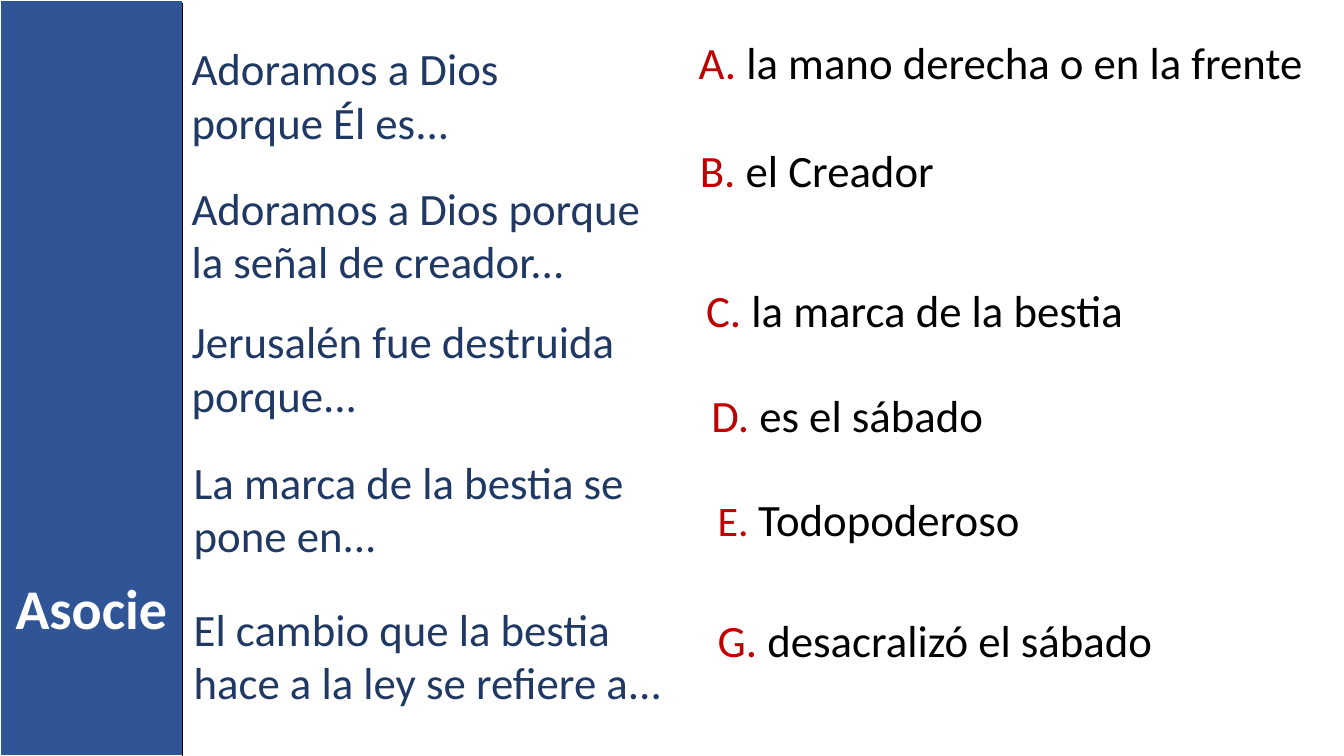
from pptx import Presentation
from pptx.dml.color import RGBColor
from pptx.enum.shapes import MSO_CONNECTOR as Conn, MSO_SHAPE as Shape
from pptx.enum.text import MSO_ANCHOR as Anchor, MSO_AUTO_SIZE as Fit, PP_ALIGN as Align
from pptx.oxml.ns import qn
from pptx.util import Pt

BLUE = RGBColor(0x2F, 0x55, 0x97)
NAVY = RGBColor(0x20, 0x38, 0x64)
RED = RGBColor(0xC0, 0x00, 0x00)
BLACK = RGBColor(0x00, 0x00, 0x00)
WHITE = RGBColor(0xFF, 0xFF, 0xFF)

WIDE, HIGH = 1280, 720
BAR = 174
SIZE = 32

CLUES = [
    (173, 34, 443, "Adoramos a Dios porque Él es..."),
    (173, 167, 466, "Adoramos a Dios porque la señal de creador..."),
    (173, 294, 425, "Jerusalén fue destruida porque..."),
    (175, 428, 442, "La marca de la bestia se pone en..."),
    (175, 568, 483, "El cambio que la bestia hace a la ley se refiere a..."),
]
REPLIES = [
    (656, 28, 605, "A. ", SIZE, "la mano derecha o en la frente"),
    (657, 131, 591, "B. ", SIZE, "el Creador"),
    (663, 265, 574, "C. ", SIZE, "la marca de la bestia"),
    (668, 365, 580, "D. ", SIZE, "es el sábado"),
    (674, 464, 552, "E. ", 30, "Todopoderoso"),
    (674, 579, 559, "G. ", SIZE, "desacralizó el sábado"),
]


def px(count):
    return count * 9525


def add_run(para, text, color, size=SIZE, bold=False):
    run = para.add_run()
    run.text = text
    font = run.font
    font.name = "Calibri"
    font.size = Pt(size)
    font.bold = bold
    font.color.rgb = color


def add_text(slide, left, top, width, height, runs):
    box = slide.shapes.add_textbox(px(left), px(top), px(width), px(height))
    frame = box.text_frame
    frame.word_wrap = True
    frame.auto_size = Fit.SHAPE_TO_FIT_TEXT
    for run in runs:
        add_run(frame.paragraphs[0], *run)


def add_bar(slide):
    bar = slide.shapes.add_shape(Shape.RECTANGLE, 0, 0, px(BAR), px(HIGH))
    bar.shadow.inherit = False
    bar.fill.solid()
    bar.fill.fore_color.rgb = BLUE
    bar.line.color.rgb = WHITE
    bar.line.width = Pt(1.5)
    return bar


def set_title(slide, bar, text):
    title = slide.shapes.title
    title.left, title.top = 0, px(541)
    title.width, title.height = px(BAR), px(74)
    frame = title.text_frame
    frame.word_wrap = True
    frame.auto_size = Fit.NONE
    frame.vertical_anchor = Anchor.TOP
    para = frame.paragraphs[0]
    para.alignment = Align.CENTER
    para.line_spacing = 1.0
    para.space_before = Pt(0)
    add_run(para, text, WHITE, 40, True)
    bar.element.addnext(title.element)


def add_edge(slide):
    edge = slide.shapes.add_connector(
        Conn.STRAIGHT, px(BAR), px(3), px(BAR), px(HIGH))
    edge.line.color.rgb = BLACK
    edge.line.width = Pt(1)
    props = edge.element.spPr
    props.append(props.makeelement(qn("a:effectLst"), {}))


def main():
    deck = Presentation()
    deck.slide_width, deck.slide_height = px(WIDE), px(HIGH)
    slide = deck.slides.add_slide(deck.slide_layouts[5])
    bar = add_bar(slide)
    set_title(slide, bar, "Asocie")
    for left, top, width, text in CLUES:
        add_text(slide, left, top, width, 113, [(text, NAVY)])
    for left, top, width, mark, size, text in REPLIES:
        add_text(slide, left, top, width, 61,
                 [(mark, RED, size), (text, BLACK)])
    add_edge(slide)
    deck.save("out.pptx")


if __name__ == "__main__":
    main()
